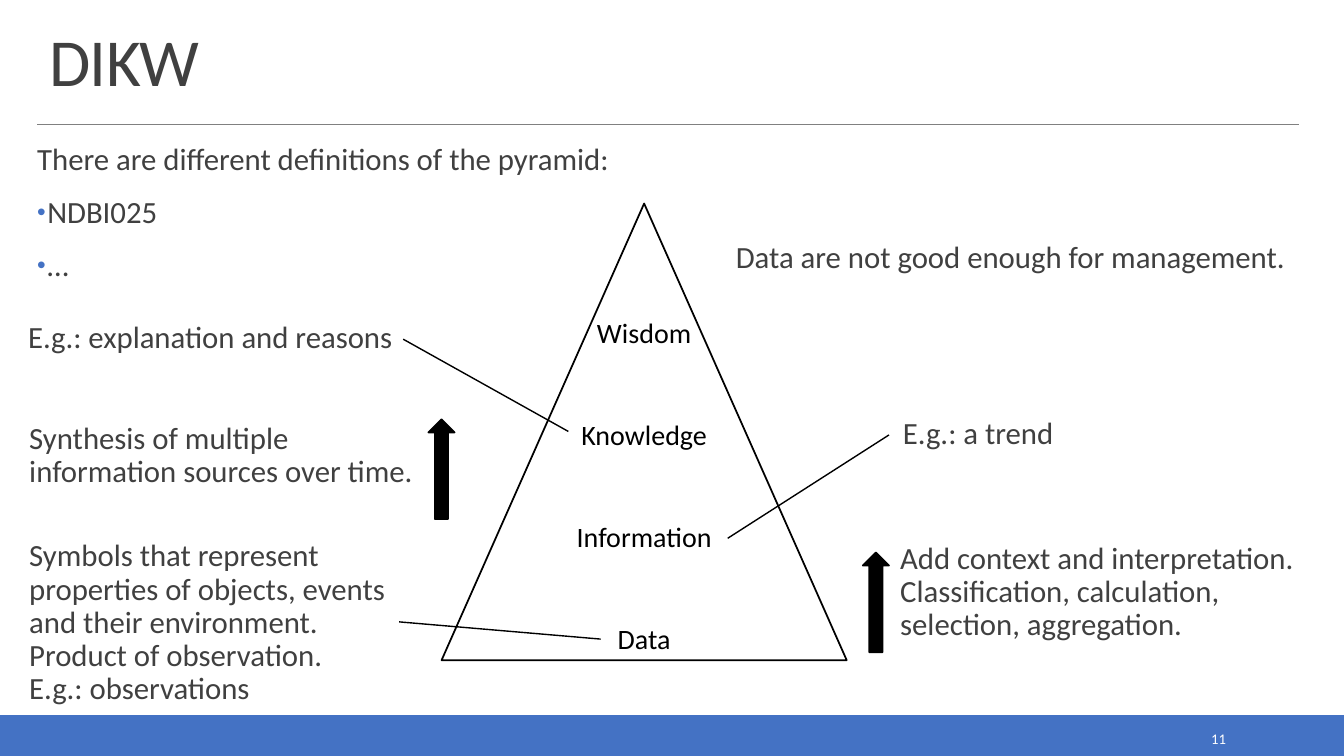
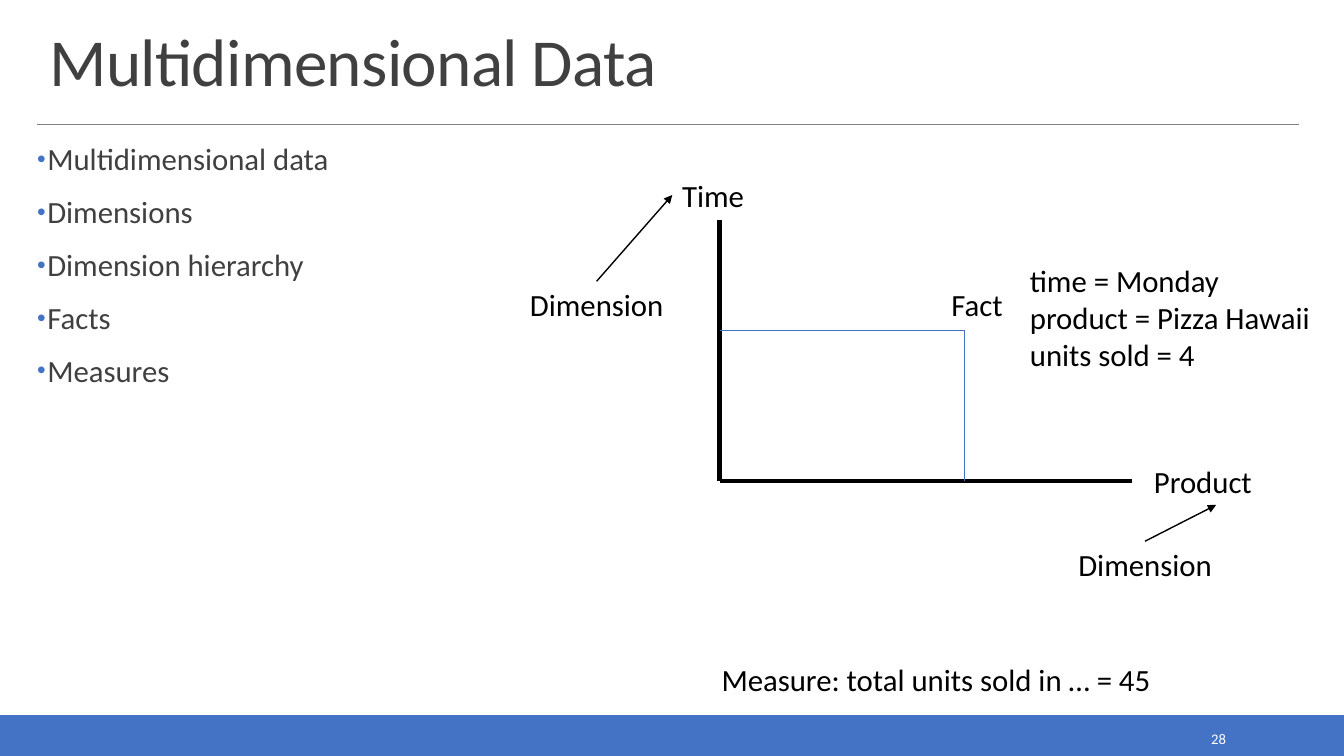
"""Build two lecture slides: the DIKW pyramid and multidimensional data."""
from dataclasses import dataclass

from lxml.etree import SubElement
from pptx import Presentation
from pptx.dml.color import RGBColor
from pptx.enum.shapes import MSO_CONNECTOR, MSO_SHAPE
from pptx.enum.text import MSO_ANCHOR, MSO_AUTO_SIZE, PP_ALIGN
from pptx.oxml.ns import qn
from pptx.shapes.base import BaseShape
from pptx.util import Pt


@dataclass(frozen=True)
class Theme:
    """Colours, type sizes and paragraph formats."""
    font: str = "Calibri"
    accent: str = "4472C4"
    ink: str = "000000"
    text: str = "404040"
    grey: str = "808080"
    white: str = "FFFFFF"
    title_size: float = 48
    body_size: float = 22
    label_size: float = 20
    number_size: float = 10.5

    def prose(self):
        """Return the paragraph format of body text."""
        return {"alignment": PP_ALIGN.LEFT, "line_spacing": 0.9,
                "space_before": Pt(12), "space_after": Pt(2)}


def set_formats(obj, formats):
    """Set each named attribute of an object."""
    for name, value in formats.items():
        setattr(obj, name, value)


def rgb(color):
    """Turn a hex colour into an RGBColor."""
    return RGBColor.from_string(color)


def place(sp, box):
    """Move and size a shape in points."""
    set_formats(sp, dict(zip(("left", "top", "width", "height"), map(Pt, box))))


class Deck:
    """Hold the theme, the presentation and the current slide."""

    def __init__(self, theme):
        """Start a widescreen presentation."""
        self.theme = theme
        self.prs = Presentation()
        set_formats(self.prs, {"slide_width": Pt(960), "slide_height": Pt(540)})

    def slide(self, title, number):
        """Add a slide with its band, rule, title and number."""
        t = self.theme
        self.s = self.prs.slides.add_slide(self.prs.slide_layouts[1])
        self.shape(MSO_SHAPE.RECTANGLE, (0, 511, 960, 29), t.accent, t.accent)
        self.line((26.6, 88.6), (928, 88.6), t.grey, 0.5)
        sp = self.s.shapes.title
        place(sp, (28.1, 14.4, 901.4, 60.5))
        self.frame(sp.text_frame, anchor=MSO_ANCHOR.BOTTOM)
        self.paragraphs(sp.text_frame, [title], t.title_size, t.text,
                        {"alignment": PP_ALIGN.LEFT, "line_spacing": 0.85})
        for r in sp.text_frame.paragraphs[0].runs:
            r._r.get_or_add_rPr().set("spc", "-50")
        self.label((779.8, 517.7, 103, 20.2), [number], PP_ALIGN.RIGHT,
                   t.number_size, t.white, MSO_ANCHOR.MIDDLE)

    def frame(self, tf, left=7.2, right=7.2, height=3.6, anchor=MSO_ANCHOR.TOP,
              auto_size=MSO_AUTO_SIZE.NONE):
        """Set insets, wrapping and anchor of a text frame."""
        set_formats(tf, {"word_wrap": True, "auto_size": auto_size,
                         "vertical_anchor": anchor,
                         "margin_left": Pt(left), "margin_right": Pt(right),
                         "margin_top": Pt(height), "margin_bottom": Pt(height)})

    def paragraphs(self, tf, lines, size, color, formats):
        """Fill a text frame with one paragraph a line."""
        for i, line in enumerate(lines):
            p = tf.paragraphs[0] if i == 0 else tf.add_paragraph()
            p.text = line
            set_formats(p, formats)
            if i == 0:
                p.space_before = Pt(0)
            for r in p.runs:
                set_formats(r.font, {"name": self.theme.font, "size": Pt(size)})
                r.font.color.rgb = rgb(color)

    def body(self, box, lines, plain=0):
        """Fill the body placeholder; the first plain lines get no bullet."""
        t = self.theme
        sp = self.s.placeholders[1]
        place(sp, box)
        tf = sp.text_frame
        self.frame(tf, 0, 0, 3)
        self.paragraphs(tf, lines, t.body_size, t.text, t.prose())
        for i, p in enumerate(tf.paragraphs):
            pPr = p._p.get_or_add_pPr()
            indent = 0 if i < plain else Pt(7.2)
            pPr.set("marL", str(indent))
            pPr.set("indent", str(-indent))
            if i < plain:
                SubElement(pPr, qn("a:buNone"))
                continue
            color = SubElement(pPr, qn("a:buClr"))
            SubElement(color, qn("a:srgbClr"), val=t.accent)
            SubElement(pPr, qn("a:buSzPct"), val="80000")
            SubElement(pPr, qn("a:buChar"), char="•")

    def note(self, box, text, left=0):
        """Add a grey remark without side insets."""
        t = self.theme
        sp = self.s.shapes.add_textbox(*map(Pt, box))
        self.frame(sp.text_frame, left, 0, 3)
        self.paragraphs(sp.text_frame, [text], t.body_size, t.text, t.prose())
        return sp

    def label(self, box, lines, align=PP_ALIGN.LEFT, size=None, color=None,
              anchor=MSO_ANCHOR.TOP):
        """Add a label, black and body-sized by default."""
        t = self.theme
        sp = self.s.shapes.add_textbox(*map(Pt, box))
        fit = MSO_AUTO_SIZE.NONE if size else MSO_AUTO_SIZE.SHAPE_TO_FIT_TEXT
        self.frame(sp.text_frame, anchor=anchor, auto_size=fit)
        self.paragraphs(sp.text_frame, lines, size or t.body_size,
                        color or t.ink, {"alignment": align})
        return sp

    def shape(self, kind, box, line, fill=None):
        """Add a preset shape, hollow unless a fill is given."""
        sp = self.s.shapes.add_shape(kind, *map(Pt, box))
        sp.shadow.inherit = False
        if fill:
            sp.fill.solid()
            sp.fill.fore_color.rgb = rgb(fill)
        else:
            sp.fill.background()
        sp.line.color.rgb = rgb(line)
        sp.line.width = Pt(1.25)
        return sp

    def pyramid(self, box, levels):
        """Add a triangle with evenly spaced levels."""
        t = self.theme
        sp = self.shape(MSO_SHAPE.ISOSCELES_TRIANGLE, box, t.ink)
        self.frame(sp.text_frame, anchor=MSO_ANCHOR.BOTTOM)
        self.paragraphs(sp.text_frame, levels, t.label_size, t.ink,
                        {"alignment": PP_ALIGN.CENTER,
                         "space_before": Pt(48.8)})

    def up_arrow(self, left, top):
        """Add a black arrow that points up."""
        ink = self.theme.ink
        self.shape(MSO_SHAPE.UP_ARROW, (left, top, 18.7, 71.3), ink, ink)

    def line(self, start, end, color=None, width=1, arrow=False):
        """Draw a line between ends given as (x, y) or (shape, side)."""
        joined = [isinstance(e[0], BaseShape) for e in (start, end)]
        ends = [(0, 0) if j else e for j, e in zip(joined, (start, end))]
        c = self.s.shapes.add_connector(
            MSO_CONNECTOR.STRAIGHT, *[Pt(v) for e in ends for v in e])
        if joined[0]:
            c.begin_connect(*start)
        if joined[1]:
            c.end_connect(*end)
        c.line.color.rgb = rgb(color or self.theme.ink)
        c.line.width = Pt(width)
        spPr = c.element.spPr
        if arrow:
            SubElement(spPr.find(qn("a:ln")), qn("a:tailEnd"), type="triangle")
        SubElement(spPr, qn("a:effectLst"))


def dikw(d):
    """Build the pyramid slide."""
    d.slide("DIKW", "11")
    d.body((26.6, 100, 901.4, 113),
           ["There are different definitions of the pyramid:", "NDBI025", "…"],
           plain=1)
    d.pyramid((315.4, 145.4, 289.4, 326.2),
              ["Wisdom", "Knowledge", "Information", "Data"])
    symbols = d.note((20.9, 383, 264.2, 122.4),
                     "Symbols that represent properties of objects, events and "
                     "their environment. Product of observation.\v"
                     "E.g.: observations")
    trend = d.note((635, 295.2, 278, 31), "E.g.: a trend", left=10)
    reasons = d.note((10, 226.8, 278, 31), "E.g.: explanation and reasons",
                     left=10)
    d.note((643, 384.5, 296.6, 70.6),
           "Add context and interpretation. Classification, calculation, "
           "selection, aggregation.")
    d.note((20.9, 298.8, 274.3, 70.6),
           "Synthesis of multiple information sources over time.")
    d.note((525.6, 170, 413.3, 31), "Data are not good enough for management.")
    d.line((429, 456.5), (symbols, 3))
    d.line((trend, 1), (519.8, 384.5))
    d.line((406, 308.2), (reasons, 3))
    d.up_arrow(616.3, 394.6)
    d.up_arrow(306, 299.5)


def multidimensional(d):
    """Build the slide with the two-dimensional chart sketch."""
    t = d.theme
    d.slide("Multidimensional Data", "28")
    d.body((26.6, 100, 453.6, 396.7),
           ["Multidimensional data", "Dimensions", "Dimension hierarchy",
            "Facts", "Measures"])
    x0, y0 = 514, 343.4
    x, y = 689, 236.2
    d.line((x0, 157), (x0, y0), width=3)
    d.line((808.6, y0), (x0, y0), width=3)
    d.line((x0, y), (x, y), t.accent)
    d.line((x, y), (x, y0), t.accent)
    time = d.label((480.2, 122.4, 67.7, 33.8), ["Time"])
    product = d.label((817.2, 326.9, 103, 33.8), ["Product"])
    d.label((728.6, 183.6, 227.5, 87.1),
            ["time = Monday", "product = Pizza Hawaii", "units sold = 4"])
    d.label((672.5, 200.9, 55.4, 33.8), ["Fact"])
    d.label((508.3, 468.7, 350, 33.8), ["Measure: total units sold in … = 45"])
    for left, top, target in ((752.4, 386.6, (product, 2)),
                              (360.7, 200.9, (time, 1))):
        sp = d.label((left, top, 131, 33.8), ["Dimension"], PP_ALIGN.CENTER)
        d.line((sp, 0), target, arrow=True)


def main():
    """Build and save the deck."""
    d = Deck(Theme())
    dikw(d)
    multidimensional(d)
    d.prs.save("out.pptx")


if __name__ == "__main__":
    main()
